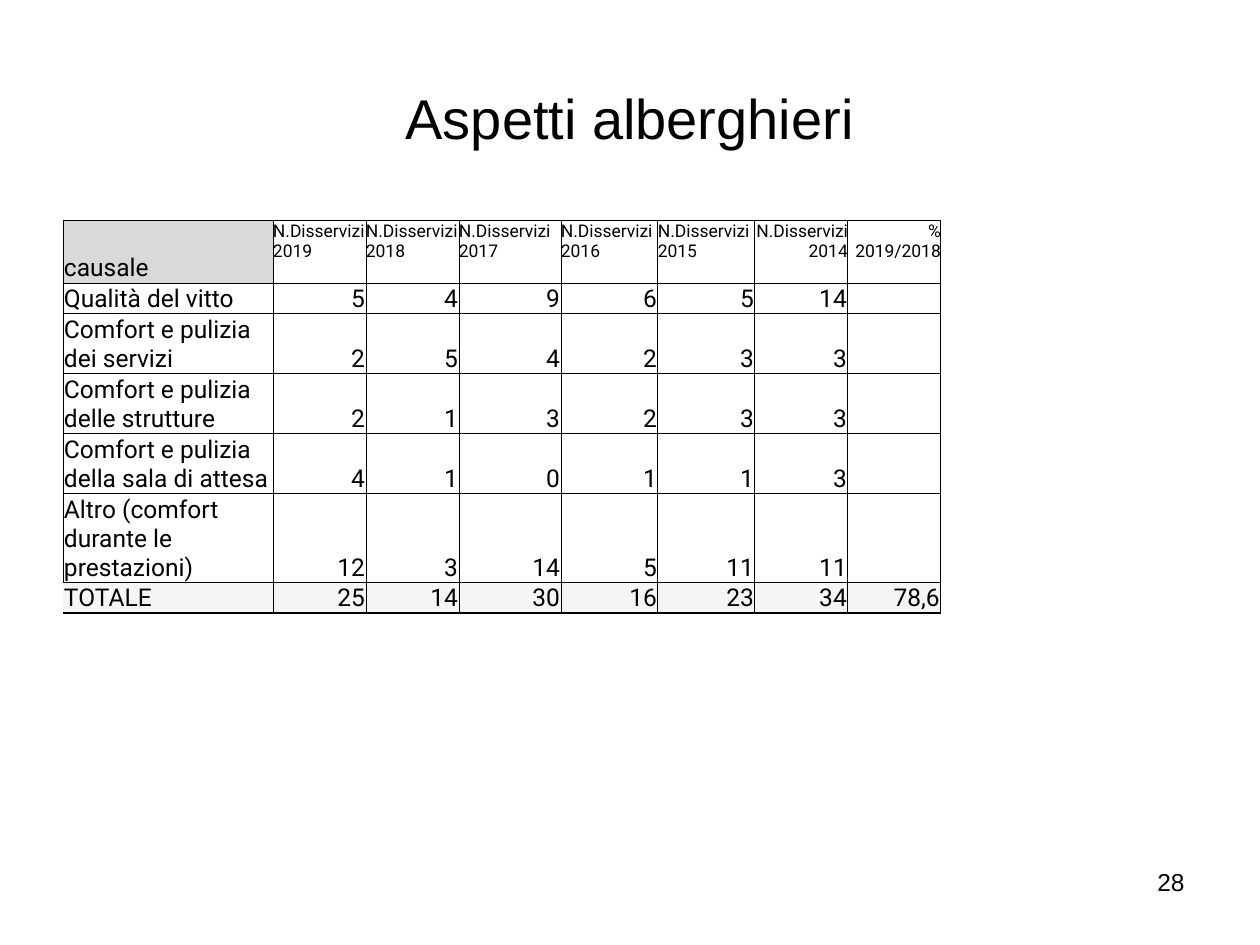
import pptx
import pptx.dml.color
import pptx.enum.text
import pptx.oxml.ns
import pptx.util
from lxml import etree

PX = pptx.util.Inches(1) // 126
BLACK = pptx.dml.color.RGBColor(0x00, 0x00, 0x00)
WHITE = pptx.dml.color.RGBColor(0xFF, 0xFF, 0xFF)
HEADER_GREY = pptx.dml.color.RGBColor(0xD9, 0xD9, 0xD9)
TOTAL_GREY = pptx.dml.color.RGBColor(0xF5, 0xF5, 0xF5)
ALIGN = pptx.enum.text.PP_ALIGN
ANCHOR = pptx.enum.text.MSO_ANCHOR

YEARS = range(2019, 2013, -1)
ROWS = [
    ["causale"] + [f"N.Disservizi {year}" for year in YEARS] + ["%\n2019/2018"],
    ["Qualità del vitto", "5", "4", "9", "6", "5", "14", ""],
    ["Comfort e pulizia dei servizi", "2", "5", "4", "2", "3", "3", ""],
    ["Comfort e pulizia delle strutture", "2", "1", "3", "2", "3", "3", ""],
    ["Comfort e pulizia della sala di attesa", "4", "1", "0", "1", "1", "3", ""],
    ["Altro (comfort durante le prestazioni)", "12", "3", "14", "5", "11", "11", ""],
    ["TOTALE", "25", "14", "30", "16", "23", "34", "78,6"],
]
COLUMN_WIDTHS = [210, 93, 93, 102, 97, 97, 93, 93]
ROW_HEIGHTS = [63, 30, 59, 59, 60, 88, 30]


def write_text(frame, text, size=14, font="Arial", color=BLACK, align=ALIGN.LEFT):
    """Fill a text frame, one paragraph for each line of text."""
    frame.word_wrap = True
    for index, line in enumerate(text.split("\n")):
        paragraph = frame.paragraphs[0] if index == 0 else frame.add_paragraph()
        paragraph.alignment = align
        if not line:
            etree.SubElement(paragraph._p, pptx.oxml.ns.qn("a:endParaRPr"), sz=str(size * 100))
            continue
        run = paragraph.add_run()
        run.text = line
        run.font.size = pptx.util.Pt(size)
        run.font.name = font
        run.font.color.rgb = color


def add_label(slide, box, text, anchor=ANCHOR.TOP, **text_format):
    """Place a text box in the given box."""
    label = slide.shapes.add_textbox(*(length * PX for length in box))
    label.text_frame.vertical_anchor = anchor
    write_text(label.text_frame, text, **text_format)


def add_border(cell, side, width):
    """Draw one side of a cell; a width of zero leaves it open."""
    properties = cell._tc.get_or_add_tcPr()
    line = etree.SubElement(properties, pptx.oxml.ns.qn(f"a:ln{side}"), w=str(pptx.util.Pt(width)))
    if not width:
        etree.SubElement(line, pptx.oxml.ns.qn("a:noFill"))
        return
    fill = etree.SubElement(line, pptx.oxml.ns.qn("a:solidFill"))
    etree.SubElement(fill, pptx.oxml.ns.qn("a:srgbClr"), val=str(BLACK))


def format_cell(cell, row, column, text):
    """Give one cell its borders, fill, insets and text."""
    last = len(ROWS) - 1
    is_year_header = row == 0 and column > 0
    widths = {
        "L": 0 if row == last and column == 0 else 0.5,
        "R": 0.5,
        "T": 1 if row == last else 0.5,
        "B": 1 if row >= last - 1 else 0.5,
    }
    for side, width in widths.items():
        add_border(cell, side, width)
    cell.fill.solid()
    if row == last:
        cell.fill.fore_color.rgb = TOTAL_GREY
    else:
        cell.fill.fore_color.rgb = HEADER_GREY if row == column == 0 else WHITE
    cell.margin_left = cell.margin_right = 0 if is_year_header else PX
    cell.margin_top, cell.margin_bottom = PX, 0
    cell.vertical_anchor = ANCHOR.TOP if is_year_header else ANCHOR.BOTTOM
    is_left = column == 0 or (row == 0 and column < 6)
    write_text(cell.text_frame, text, size=10 if is_year_header else 14,
               font="Roboto", align=ALIGN.LEFT if is_left else ALIGN.RIGHT)


def add_complaints_table(slide, left, top):
    """Place the table of complaints by cause and year."""
    frame = slide.shapes.add_table(
        len(ROWS), len(COLUMN_WIDTHS), left * PX, top * PX,
        sum(COLUMN_WIDTHS) * PX, sum(ROW_HEIGHTS) * PX)
    table = frame.table
    table.first_row = table.horz_banding = False
    for column, width in zip(table.columns, COLUMN_WIDTHS):
        column.width = width * PX
    for row, height in zip(table.rows, ROW_HEIGHTS):
        row.height = height * PX
    for row, texts in enumerate(ROWS):
        for column, text in enumerate(texts):
            format_cell(table.cell(row, column), row, column, text)


def main():
    """Build the slide and save it."""
    presentation = pptx.Presentation()
    presentation.slide_width = 1260 * PX
    presentation.slide_height = 945 * PX
    slide = presentation.slides.add_slide(presentation.slide_layouts[6])
    add_label(slide, (63, 38, 1134, 158), "Aspetti alberghieri",
              anchor=ANCHOR.MIDDLE, size=32, align=ALIGN.CENTER)
    add_complaints_table(slide, 63, 220)
    add_label(slide, (903, 861, 294, 65), "28", align=ALIGN.RIGHT)
    presentation.save("out.pptx")


if __name__ == "__main__":
    main()
